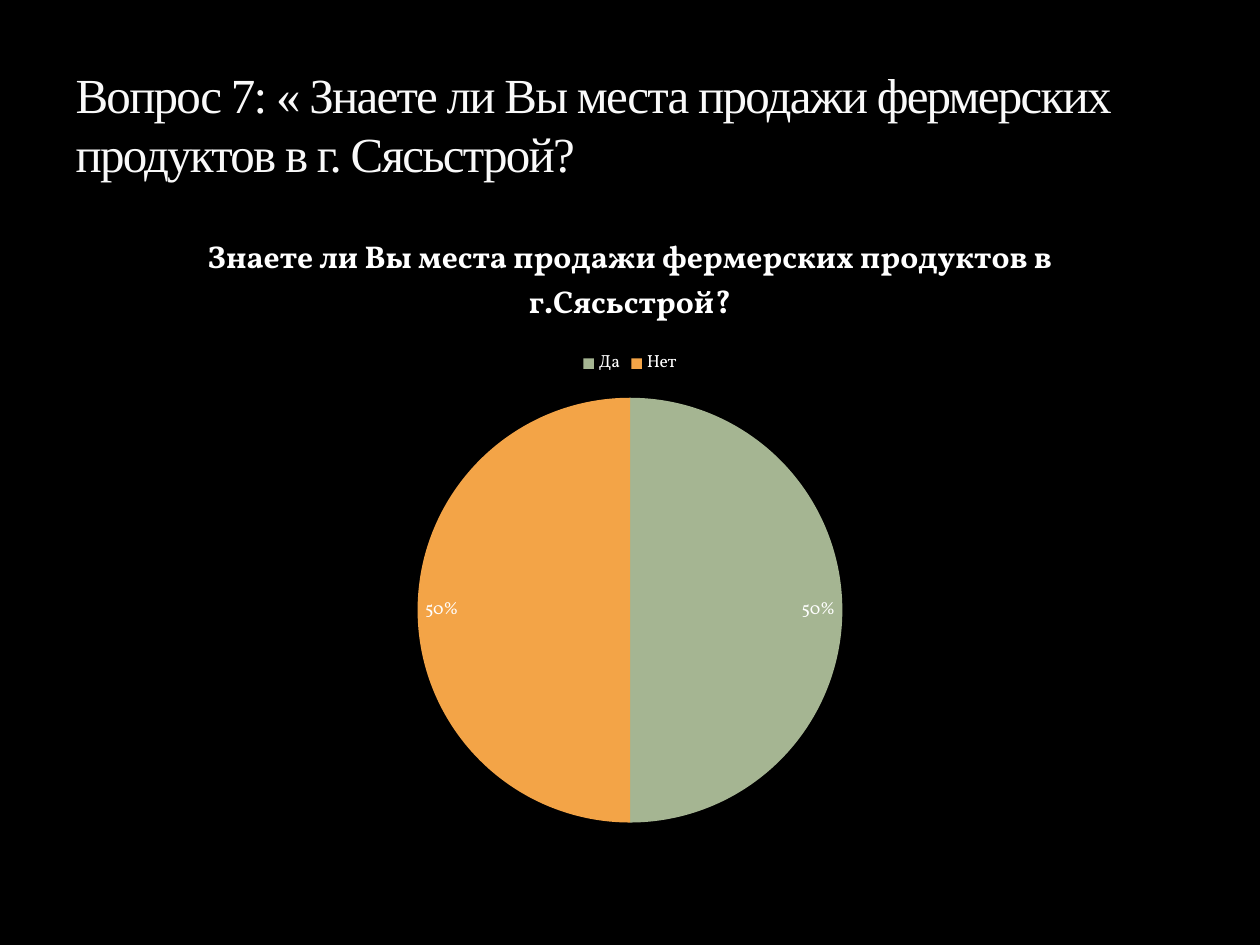
from lxml import etree
from pptx import Presentation
from pptx.chart.data import CategoryChartData
from pptx.dml.color import RGBColor
from pptx.enum.chart import XL_CHART_TYPE as ChartType
from pptx.enum.chart import XL_LABEL_POSITION as LabelPosition
from pptx.enum.chart import XL_LEGEND_POSITION as LegendPosition
from pptx.enum.text import MSO_ANCHOR, MSO_AUTO_SIZE, PP_ALIGN
from pptx.oxml import parse_xml
from pptx.util import Emu, Pt

PX = 914400 // 126
HEADING = "Вопрос 7: « Знаете ли Вы места продажи фермерских продуктов в г. Сясьстрой?"
QUESTION = "Знаете ли Вы места продажи фермерских продуктов в г.Сясьстрой?"
ANSWERS = {"Да": (50, "A5B592"), "Нет": (50, "F3A447")}
OUTLINE = (
    '<a:ln xmlns:a="http://schemas.openxmlformats.org/drawingml/2006/main" w="3175">'
    '<a:solidFill><a:srgbClr val="3C4422"><a:alpha val="25000"/></a:srgbClr></a:solidFill>'
    '<a:prstDash val="solid"/></a:ln>'
)


def color(code):
    return RGBColor.from_string(code)


def style(font, code, **values):
    """Apply a text colour and any other font attributes."""
    font.color.rgb = color(code)
    for name, value in values.items():
        setattr(font, name, value)


deck = Presentation()
deck.slide_width, deck.slide_height = Emu(1260 * PX), Emu(945 * PX)
page = deck.slides.add_slide(deck.slide_layouts[5])
page.background.fill.solid()
page.background.fill.fore_color.rgb = color("000000")

# Heading
title = page.shapes.title
title.left, title.top, title.width, title.height = [
    Emu(length * PX) for length in (63, 21, 1134, 168)
]
box = title.text_frame
box.auto_size = MSO_AUTO_SIZE.NONE
box.word_wrap = True
box.vertical_anchor = MSO_ANCHOR.BOTTOM
para = box.paragraphs[0]
para.alignment = PP_ALIGN.LEFT
span = para.add_run()
span.text = HEADING
style(span.font, "F9F9F9", name="Times New Roman", size=Pt(28))
span_format = span._r.get_or_add_rPr()
span_format.set("spc", "-100")
span_format.insert(0, parse_xml(OUTLINE))

# Pie of answers
answers = CategoryChartData()
answers.categories = list(ANSWERS)
answers.add_series(QUESTION, [value for value, _ in ANSWERS.values()])
place = [Emu(length * PX) for length in (63, 210, 1134, 630)]
chart = page.shapes.add_chart(ChartType.PIE, *place, answers).chart
style(chart.font, "FFFFFF", name="Vollkorn", size=Pt(10))

chart.has_title = True
chart_title = chart.chart_title.text_frame
chart_title.text = QUESTION
style(chart_title.paragraphs[0].runs[0].font, "FFFFFF",
      name="Vollkorn", size=Pt(18), bold=True)

chart.has_legend = True
chart.legend.position = LegendPosition.TOP
chart.legend.include_in_layout = False

plot = chart.plots[0]
plot.vary_by_categories = True
for index, (_, code) in enumerate(ANSWERS.values()):
    fill = plot.series[0].points[index].format.fill
    fill.solid()
    fill.fore_color.rgb = color(code)

plot.has_data_labels = True
labels = plot.data_labels
label_format = {
    "show_percentage": True,
    "show_value": False,
    "number_format": "0%",
    "number_format_is_linked": False,
    "position": LabelPosition.INSIDE_END,
}
for name, value in label_format.items():
    setattr(labels, name, value)
style(labels.font, "FFFFFF", name="Vollkorn", size=Pt(10))

deck.save("out.pptx")
